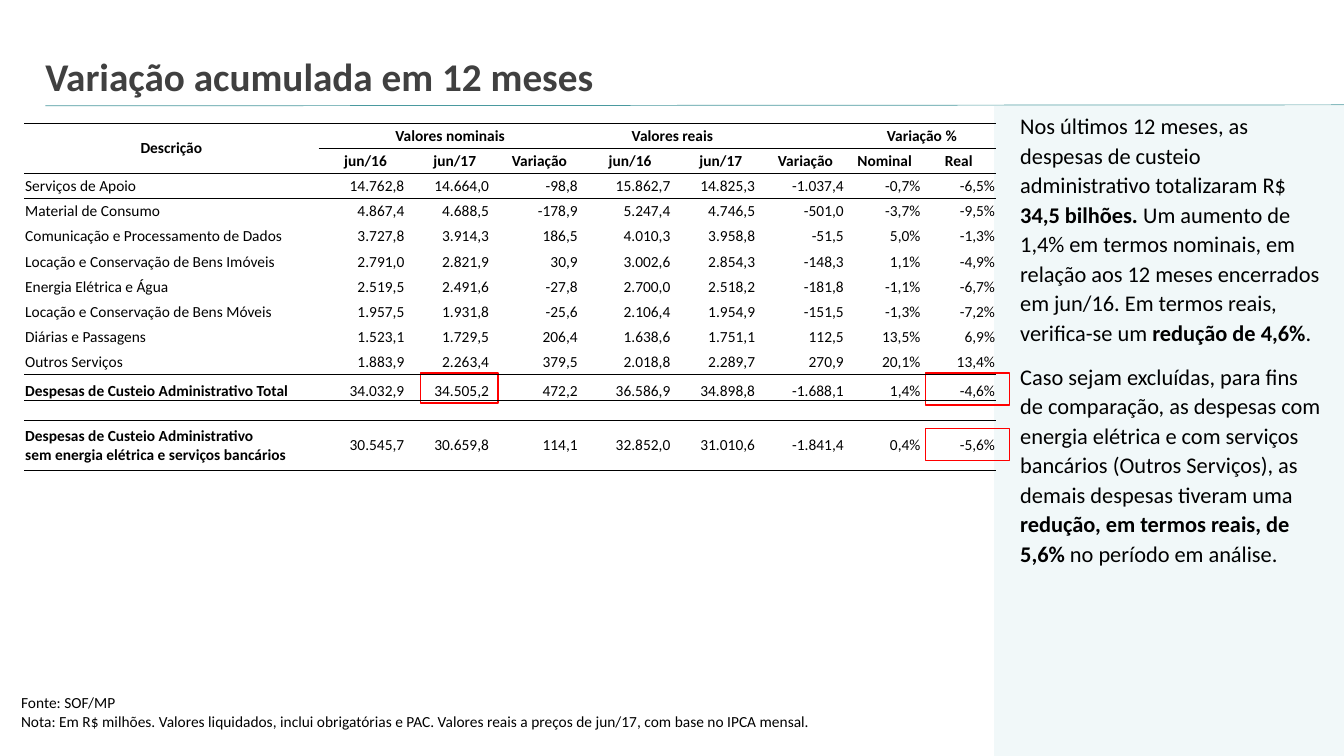
from dataclasses import dataclass
from typing import NamedTuple

import pptx
import pptx.dml.color
import pptx.enum.shapes
import pptx.enum.text
import pptx.oxml
import pptx.oxml.ns
import pptx.util

ALIGN = pptx.enum.text.PP_ALIGN
ANCHOR = pptx.enum.text.MSO_ANCHOR
RECT = pptx.enum.shapes.MSO_SHAPE.RECTANGLE
NO_GRID_STYLE = "{2D5ABB26-0587-4C30-8999-92F81FD0307C}"


@dataclass(frozen=True)
class Theme:
    font: str = "Calibri"
    title: str = "404040"
    text: str = "000000"
    panel: str = "F1F8F9"
    rule: str = "4A999F"
    mark: str = "FF0000"
    title_size: int = 28
    body_size: int = 16
    small_size: int = 11
    gap_size: int = 6


class Box(NamedTuple):
    """Left, top, width and height in percent of the slide."""
    x: float
    y: float
    w: float
    h: float


class Run(NamedTuple):
    text: str
    bold: bool = False


class Column(NamedTuple):
    width: float
    right_inset: float = 0.01


T = Theme()
prs = pptx.Presentation()
prs.slide_width = pptx.util.Inches(13.33)
prs.slide_height = pptx.util.Inches(7.5)


def across(share: float) -> int:
    return round(prs.slide_width * share / 100)


def down(share: float) -> int:
    return round(prs.slide_height * share / 100)


def place(box: Box) -> tuple[int, int, int, int]:
    return across(box.x), down(box.y), across(box.w), down(box.h)


def rgb(value: str) -> pptx.dml.color.RGBColor:
    return pptx.dml.color.RGBColor.from_string(value)


def add_run(p, run: Run, size: float, color: str = T.text) -> None:
    r = p.add_run()
    r.text = run.text
    r.font.name = T.font
    r.font.size = pptx.util.Pt(size)
    r.font.bold = run.bold
    r.font.color.rgb = rgb(color)


def add_text(slide, box: Box, paragraphs: list[list[Run]], size: float, color: str = T.text,
             anchor=ANCHOR.TOP, spacing: float = 1.0, before: float = 0) -> None:
    tf = slide.shapes.add_textbox(*place(box)).text_frame
    tf.word_wrap = True
    tf.vertical_anchor = anchor
    for i, runs in enumerate(paragraphs):
        p = tf.add_paragraph() if i else tf.paragraphs[0]
        p.line_spacing = spacing
        if i:
            p.space_before = pptx.util.Pt(before)
        for run in runs:
            add_run(p, run, size, color)


def add_rect(slide, box: Box, line: str, fill: str | None = None) -> None:
    sp = slide.shapes.add_shape(RECT, *place(box))
    sp.shadow.inherit = False
    if fill:
        sp.fill.solid()
        sp.fill.fore_color.rgb = rgb(fill)
    else:
        sp.fill.background()
    sp.line.color.rgb = rgb(line)
    sp.line.width = pptx.util.Pt(1)


def add_border(cell, side: str, points: float) -> None:
    ns = pptx.oxml.ns.nsdecls("a")
    cell._tc.get_or_add_tcPr().append(pptx.oxml.parse_xml(
        f'<a:{side} {ns} w="{pptx.util.Pt(points)}"><a:solidFill>'
        f'<a:srgbClr val="{T.text}"/></a:solidFill></a:{side}>'))


# Table content
COLUMNS = [Column(21.91), Column(6.98, 0.08), Column(6.3, 0.08), Column(6.3, 0.04),
           Column(7.2, 0.08), Column(6.3, 0.08), Column(6.3, 0.04), Column(5.48), Column(5.55)]
HEADERS = [
    ["Descrição", "Valores nominais", "", "", "Valores reais", "", "", "Variação %", ""],
    ["", "jun/16", "jun/17", "Variação", "jun/16", "jun/17", "Variação", "Nominal", "Real"],
]
EXPENSES = [row.split("|") for row in (
    "Serviços de Apoio|14.762,8|14.664,0|-98,8|15.862,7|14.825,3|-1.037,4|-0,7%|-6,5%",
    "Material de Consumo|4.867,4|4.688,5|-178,9|5.247,4|4.746,5|-501,0|-3,7%|-9,5%",
    "Comunicação e Processamento de Dados|3.727,8|3.914,3|186,5|4.010,3|3.958,8|-51,5|5,0%|-1,3%",
    "Locação e Conservação de Bens Imóveis|2.791,0|2.821,9|30,9|3.002,6|2.854,3|-148,3|1,1%|-4,9%",
    "Energia Elétrica e Água|2.519,5|2.491,6|-27,8|2.700,0|2.518,2|-181,8|-1,1%|-6,7%",
    "Locação e Conservação de Bens Móveis|1.957,5|1.931,8|-25,6|2.106,4|1.954,9|-151,5|-1,3%|-7,2%",
    "Diárias e Passagens|1.523,1|1.729,5|206,4|1.638,6|1.751,1|112,5|13,5%|6,9%",
    "Outros Serviços|1.883,9|2.263,4|379,5|2.018,8|2.289,7|270,9|20,1%|13,4%",
    "Despesas de Custeio Administrativo Total|34.032,9|34.505,2|472,2|36.586,9|34.898,8|-1.688,1|1,4%|-4,6%",
)]
ADJUSTED = ("Despesas de Custeio Administrativo\nsem energia elétrica e serviços bancários"
            "|30.545,7|30.659,8|114,1|32.852,0|31.010,6|-1.841,4|0,4%|-5,6%").split("|")
ROWS = HEADERS + EXPENSES + [[""] * len(COLUMNS), ADJUSTED]
TOTAL, ADJUSTED_ROW = 10, 12
ROW_HEIGHTS = [3.33] * TOTAL + [3.47, 2.53, 6.67]
EDGES = {0: 0.5, 1: 0.5, 2: 0.5, TOTAL: 0.5, 11: 1, 12: 0.5, 13: 1}  # row edge: points
MERGES = [((0, 0), (1, 0)), ((0, 1), (0, 3)), ((0, 4), (0, 5)), ((0, 7), (0, 8))]


def fill_cell(cell, row: int, col: int, text: str) -> None:
    header = row < len(HEADERS)
    inset = 0.01 if header else COLUMNS[col].right_inset
    cell.margin_left = cell.margin_top = pptx.util.Inches(0.01)
    cell.margin_right, cell.margin_bottom = pptx.util.Inches(inset), 0
    cell.vertical_anchor = ANCHOR.BOTTOM if row == TOTAL else ANCHOR.MIDDLE
    for side, edge in (("lnT", row), ("lnB", row + 1)):
        if edge in EDGES and (edge, col) != (1, 0):
            add_border(cell, side, EDGES[edge])
    cell.fill.background()
    p = cell.text_frame.paragraphs[0]
    if not text:
        end = pptx.oxml.parse_xml(
            f'<a:endParaRPr {pptx.oxml.ns.nsdecls("a")} sz="{T.gap_size * 100}"/>')
        p._p.append(end)
        return
    p.alignment = ALIGN.CENTER if header else ALIGN.RIGHT if col else ALIGN.LEFT
    bold = header or (col == 0 and row in (TOTAL, ADJUSTED_ROW))
    for i, line in enumerate(text.split("\n")):
        if i:
            p.add_line_break()
        add_run(p, Run(line, bold), T.small_size)


def add_expense_table(slide, box: Box) -> None:
    tbl = slide.shapes.add_table(len(ROWS), len(COLUMNS), *place(box)).table
    tbl._tbl.tblPr.find(pptx.oxml.ns.qn("a:tableStyleId")).text = NO_GRID_STYLE
    tbl.first_row = tbl.horz_banding = False
    for i, column in enumerate(COLUMNS):
        tbl.columns[i].width = across(column.width)
    for i, values in enumerate(ROWS):
        tbl.rows[i].height = down(ROW_HEIGHTS[i])
        for j, text in enumerate(values):
            fill_cell(tbl.cell(i, j), i, j, text)
    for first, last in MERGES:
        tbl.cell(*first).merge(tbl.cell(*last))


slide = prs.slides.add_slide(prs.slide_layouts[6])

# Side panel and title rule
add_rect(slide, Box(74.04, 14.13, 25.96, 85.87), T.panel, T.panel)
rule = slide.shapes.add_connector(pptx.enum.shapes.MSO_CONNECTOR.STRAIGHT,
                                  across(3.38), down(14), across(100), down(13.87))
rule.line.color.rgb = rgb(T.rule)
rule.line.width = pptx.util.Pt(0.5)
rule._element.spPr.append(pptx.oxml.parse_xml(f'<a:effectLst {pptx.oxml.ns.nsdecls("a")}/>'))

# Title, source note and commentary
add_text(slide, Box(2.63, 1.2, 72.54, 12.67), [[Run("Variação acumulada em 12 meses", True)]],
         T.title_size, T.title, ANCHOR.BOTTOM, 0.9)
add_text(slide, Box(0.83, 91.07, 61.97, 8.8), [
    [Run("Fonte: SOF/MP")],
    [Run("Nota: Em R$ milhões. Valores liquidados, inclui obrigatórias e PAC. "
         "Valores reais a preços de jun/17, com base no IPCA mensal.")],
], T.small_size)
add_text(slide, Box(75.17, 13.87, 23.86, 74.93), [
    [Run("Nos últimos 12 meses, as despesas de custeio administrativo totalizaram R$ "),
     Run("34,5 bilhões. ", True),
     Run("Um aumento de 1,4% em termos nominais, em relação aos 12 meses encerrados "
         "em jun/16. Em termos reais, verifica-se um "),
     Run("redução de 4,6%", True), Run(".")],
    [Run("Caso sejam excluídas, para fins de comparação, as despesas com energia elétrica "
         "e com serviços bancários (Outros Serviços), as demais despesas tiveram uma "),
     Run("redução, em termos reais, de 5,6% ", True), Run("no período em análise.")],
], T.body_size, spacing=1.1, before=10)

# Highlighted values and table
for mark in (Box(31.28, 49.33, 5.78, 4), Box(68.87, 49.33, 6.23, 4.27),
             Box(68.87, 56.67, 6.23, 4.27)):
    add_rect(slide, mark, T.mark)
add_expense_table(slide, Box(1.8, 16.27, 72.24, 46))

prs.save("out.pptx")
